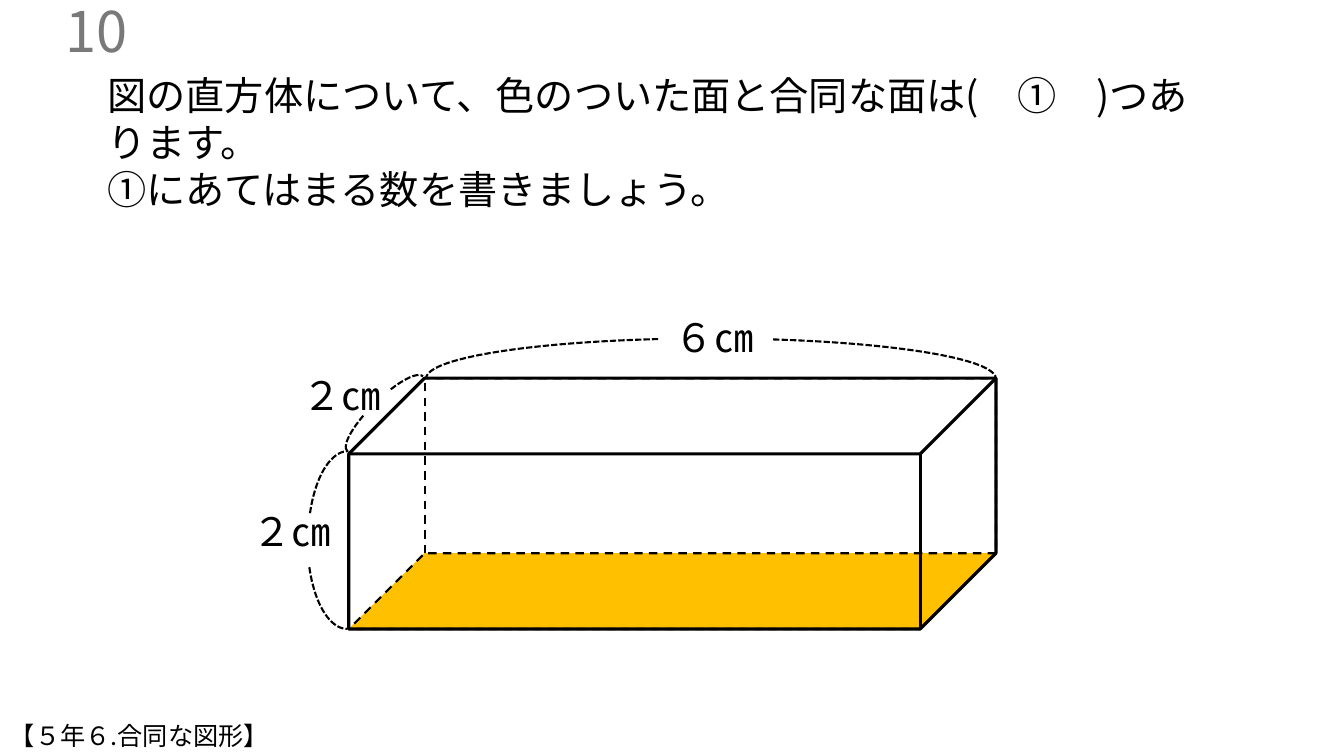
from lxml.etree import SubElement
from pptx import Presentation
from pptx.dml.color import RGBColor
from pptx.enum.dml import MSO_LINE
from pptx.enum.lang import MSO_LANGUAGE_ID
from pptx.enum.shapes import MSO_SHAPE
from pptx.enum.text import MSO_ANCHOR, MSO_AUTO_SIZE, PP_ALIGN
from pptx.oxml.ns import qn
from pptx.util import Cm, Pt

BLACK = RGBColor(0x00, 0x00, 0x00)
GRAY = RGBColor(0x79, 0x79, 0x79)
AMBER = RGBColor(0xFF, 0xC0, 0x00)
FONT = "Noto Sans CJK JP"

BOX_LEFT, BOX_TOP = 8.79, 9.53
BOX_WIDTH, BOX_HEIGHT, BOX_DEPTH = 16.31, 6.32, 1.91

QUESTION = [
    "図の直方体について、色のついた面と合同な面は(\u3000①\u3000)つあります。".replace("\u3000", "　"),
    "①にあてはまる数を書きましょう。",
]

EDGE_LABELS = [
    ("６㎝", 16.76, 7.77),
    ("２㎝", 6.12, 12.67),
    ("２㎝", 7.37, 9.22),
]

DIMENSION_ARCS = [
    ((10.72, 8.53, 14.38, 2.03), 0, 196.71, False),
    ((10.74, 8.53, 14.2, 2.01), 0, 193, True),
    ((6.53, 12.6, 4.5, 2.03), 270, 183.17, False),
    ((6.53, 12.62, 4.45, 2.01), 270, 182.95, True),
    ((8.36, 10.06, 2.69, 0.74), 315.3, 196.71, False),
    ((8.36, 10.06, 2.67, 0.71), 315.3, 193, True),
]


def apply_format(target, values):
    for name, value in values.items():
        setattr(target, name, value)


def place(shape, bounds):
    names = ("left", "top", "width", "height")
    apply_format(shape, {name: Cm(value) for name, value in zip(names, bounds)})


def write_text(shape, lines, size, color=BLACK, alignment=PP_ALIGN.LEFT):
    text_frame = shape.text_frame
    text_frame.text = "\n".join(lines)
    for paragraph in text_frame.paragraphs:
        paragraph.alignment = alignment
        for run in paragraph.runs:
            run.font.color.rgb = color
            apply_format(run.font, {
                "size": Pt(size),
                "name": FONT,
                "language_id": MSO_LANGUAGE_ID.JAPANESE,
            })
            SubElement(run.font._element, qn("a:ea"), typeface=FONT)


def add_text(slide, lines, bounds, size):
    text_box = slide.shapes.add_textbox(*map(Cm, bounds))
    apply_format(text_box.text_frame, {
        "word_wrap": True,
        "auto_size": MSO_AUTO_SIZE.SHAPE_TO_FIT_TEXT,
    })
    write_text(text_box, lines, size)


def set_number(slide, number):
    title = slide.shapes.title
    place(title, (-4.14, 0.25, 7.62, 1.02))
    apply_format(title.text_frame, {
        "word_wrap": True,
        "auto_size": MSO_AUTO_SIZE.NONE,
        "vertical_anchor": MSO_ANCHOR.MIDDLE,
    })
    write_text(title, [number], 40, GRAY, PP_ALIGN.RIGHT)


def add_outline(slide, kind, bounds, adjustment, width, dash, rotation=0):
    shape = slide.shapes.add_shape(kind, *map(Cm, bounds))
    shape.shadow.inherit = False
    shape.adjustments[0] = adjustment
    shape.rotation = rotation
    shape.fill.background()
    shape.line.color.rgb = BLACK
    apply_format(shape.line, {"width": Pt(width), "dash_style": dash})
    return shape


def add_colored_face(slide):
    top = BOX_TOP + BOX_HEIGHT - BOX_DEPTH
    bounds = (BOX_LEFT, top, BOX_WIDTH, BOX_DEPTH)
    face = slide.shapes.add_shape(MSO_SHAPE.PARALLELOGRAM, *map(Cm, bounds))
    face.shadow.inherit = False
    face.adjustments[0] = 1
    face.fill.solid()
    face.fill.fore_color.rgb = AMBER
    face.line.fill.background()


def add_cuboid(slide):
    bounds = (BOX_LEFT, BOX_TOP, BOX_WIDTH, BOX_HEIGHT)
    ratio = BOX_DEPTH / BOX_HEIGHT
    add_outline(slide, MSO_SHAPE.CUBE, bounds, ratio, 2.25, MSO_LINE.SOLID)
    add_outline(slide, MSO_SHAPE.CUBE, bounds, ratio, 1.5, MSO_LINE.DASH, 180)


def add_dimension_arc(slide, bounds, rotation, start, flipped):
    arc = add_outline(slide, MSO_SHAPE.ARC, bounds, start, 1.5, MSO_LINE.SQUARE_DOT, rotation)
    if flipped:
        arc._element.spPr.find(qn("a:xfrm")).set("flipH", "1")


def main():
    presentation = Presentation()
    apply_format(presentation, {"slide_width": Cm(33.87), "slide_height": Cm(19.05)})
    slide = presentation.slides.add_slide(presentation.slide_layouts[5])
    add_colored_face(slide)
    add_text(slide, QUESTION, (2.46, 1.68, 27.79, 3.84), 28)
    set_number(slide, "10")
    add_cuboid(slide)
    for arc in DIMENSION_ARCS:
        add_dimension_arc(slide, *arc)
    for label, left, top in EDGE_LABELS:
        add_text(slide, [label], (left, top, 3, 1.45), 28)
    add_text(slide, ["【５年６.合同な図形】"], (0, 18.03, 19.02, 1.02), 18)
    presentation.save("out.pptx")


if __name__ == "__main__":
    main()
